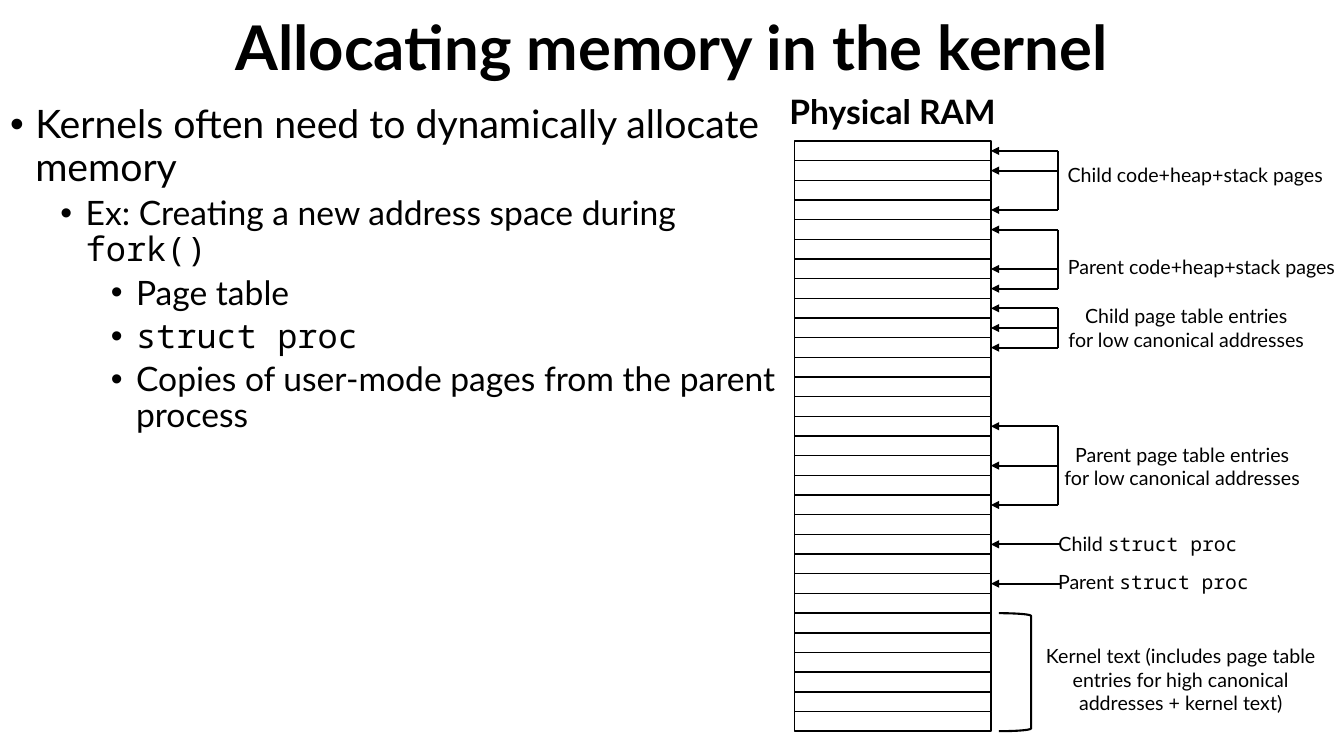
import pptx
import pptx.dml.color
import pptx.enum.shapes
import pptx.enum.text
import pptx.oxml
import pptx.oxml.ns
import pptx.util
from lxml import etree

Pt = pptx.util.Pt
SHAPES = pptx.enum.shapes.MSO_SHAPE
CENTER = pptx.enum.text.PP_ALIGN.CENTER
LEFT = pptx.enum.text.PP_ALIGN.LEFT
SANS, MONO = "Lato", "Noto Sans Mono"

# Column of physical page frames, in points
FRAME_COUNT = 30
FRAME_LEFT, FRAME_TOP = 567.4, 100.8
FRAME_WIDTH, FRAME_HEIGHT = 140.4, 14.05
RIGHT_SIDE = 3


def color(value):
    return pptx.dml.color.RGBColor.from_string(value)


def add_text(paragraph, text, font=SANS, size=14, fill="000000", bold=False):
    run = paragraph.add_run()
    run.text = text
    run.font.name = font
    run.font.size = Pt(size)
    run.font.bold = bold
    run.font.color.rgb = color(fill)


class SlideBuilder:
    line_color = "000000"
    frame_fill = "FFFFFF"

    def __init__(self, presentation):
        self.slide = presentation.slides.add_slide(presentation.slide_layouts[1])

    def place(self, shape, left, top, width, height):
        shape.left, shape.top = Pt(left), Pt(top)
        shape.width, shape.height = Pt(width), Pt(height)
        shape.text_frame.auto_size = pptx.enum.text.MSO_AUTO_SIZE.NONE
        return shape.text_frame

    def title(self, text, *box):
        text_frame = self.place(self.slide.shapes.title, *box)
        text_frame.vertical_anchor = pptx.enum.text.MSO_ANCHOR.MIDDLE
        paragraph = text_frame.paragraphs[0]
        paragraph.alignment = CENTER
        paragraph.line_spacing = 0.9
        add_text(paragraph, text, size=44, bold=True)

    def bullets(self, items, *box):
        text_frame = self.place(self.slide.placeholders[1], *box)
        for index, (level, size, runs) in enumerate(items):
            paragraph = text_frame.add_paragraph() if index else text_frame.paragraphs[0]
            paragraph.level = level
            paragraph.alignment = LEFT
            paragraph.line_spacing = 0.9
            paragraph.space_before = Pt(5 if level else 10)
            properties = paragraph._p.get_or_add_pPr()
            properties.set("marL", str(Pt(18 + 36 * level)))
            properties.set("indent", str(Pt(-18)))
            bullet_font = etree.SubElement(properties, pptx.oxml.ns.qn("a:buFont"))
            bullet_font.set("typeface", "Arial")
            bullet = etree.SubElement(properties, pptx.oxml.ns.qn("a:buChar"))
            bullet.set("char", "•")
            for text, font in runs:
                add_text(paragraph, text, font=font, size=size)

    def label(self, lines, *box, **style):
        text_frame = self.slide.shapes.add_textbox(*map(Pt, box)).text_frame
        text_frame.word_wrap = True
        for index, runs in enumerate(lines):
            paragraph = text_frame.add_paragraph() if index else text_frame.paragraphs[0]
            paragraph.alignment = CENTER
            for text, font in runs:
                add_text(paragraph, text, font=font, **style)

    def shape(self, kind, *box, fill=None, width=1):
        shape = self.slide.shapes.add_shape(kind, *map(Pt, box))
        shape.shadow.inherit = False
        if fill:
            shape.fill.solid()
            shape.fill.fore_color.rgb = color(fill)
        else:
            shape.fill.background()
        shape.line.color.rgb = color(self.line_color)
        shape.line.width = Pt(width)
        return shape

    def connector(self, *points, target=None):
        """Draw a line; with a target it becomes an arrow to its right side."""
        connector = self.slide.shapes.add_connector(
            pptx.enum.shapes.MSO_CONNECTOR.STRAIGHT, *map(Pt, points))
        connector.line.color.rgb = color(self.line_color)
        connector.line.width = Pt(1.5)
        if target is not None:
            connector.end_connect(target, RIGHT_SIDE)
            arrowhead = etree.SubElement(
                connector.line._get_or_add_ln(), pptx.oxml.ns.qn("a:tailEnd"))
            arrowhead.set("type", "triangle")
        etree.SubElement(connector._element.spPr, pptx.oxml.ns.qn("a:effectLst"))


def frame_middle(row):
    return FRAME_TOP + (row + 0.5) * FRAME_HEIGHT


def main():
    presentation = pptx.Presentation()
    presentation.slide_width, presentation.slide_height = Pt(960), Pt(540)
    builder = SlideBuilder(presentation)

    # Title and list
    builder.title("Allocating memory in the kernel", 66.2, 4.3, 828, 64)
    builder.bullets([
        (0, 28, [("Kernels often need to dynamically allocate memory", SANS)]),
        (1, 24, [("Ex: Creating a new address space during ", SANS), ("fork()", MONO)]),
        (2, 24, [("Page table", SANS)]),
        (2, 24, [("struct proc", MONO)]),
        (2, 24, [("Copies of user-mode pages from the parent process", SANS)]),
    ], 0, 71.3, 561.6, 452.9)

    # Physical RAM
    frames = [
        builder.shape(SHAPES.RECTANGLE, FRAME_LEFT, FRAME_TOP + row * FRAME_HEIGHT,
                      FRAME_WIDTH, FRAME_HEIGHT, fill=builder.frame_fill)
        for row in range(FRAME_COUNT)
    ]
    builder.label([[("Physical RAM", SANS)]], 550.8, 61.2, 173.5, 36, size=24, bold=True)

    # Kernel text in the last six frames
    builder.shape(SHAPES.RIGHT_BRACKET, 713.5, FRAME_TOP + 24 * FRAME_HEIGHT,
                  23, 6 * FRAME_HEIGHT, width=1.5)
    builder.label([[("Kernel text (includes page table entries for high canonical "
                     "addresses + kernel text)", SANS)]], 728.6, 456.5, 229.7, 58.3)

    # Owners of the other frames: rows, arrow start, label lines, label box
    low_addresses = [("for low canonical addresses", SANS)]
    owners = [
        ([0, 1, 3], 755.5, [[("Child code+heap+stack pages", SANS)]],
         (749.5, 113, 208.8, 24.5)),
        ([4, 6, 7], 755.5, [[("Parent code+heap+stack pages", SANS)]],
         (751, 178.6, 214.6, 24.5)),
        ([8, 9, 10], 755.5, [[("Child page table entries", SANS)], low_addresses],
         (749.5, 213.8, 195.8, 41)),
        ([14, 16, 18], 756, [[("Parent page table entries", SANS)], low_addresses],
         (746.6, 312.5, 195.8, 41)),
        ([20], 757.4, [[("Child ", SANS), ("struct proc", MONO)]],
         (745.9, 376.6, 148.3, 24.5)),
        ([22], 757.4, [[("Parent ", SANS), ("struct proc", MONO)]],
         (745.9, 403.2, 156.2, 24.5)),
    ]
    for rows, start, lines, box in owners:
        for row in rows:
            middle = frame_middle(row)
            builder.connector(start, middle, FRAME_LEFT + FRAME_WIDTH, middle,
                              target=frames[row])
        if len(rows) > 1:
            builder.connector(start, frame_middle(rows[0]), start, frame_middle(rows[-1]))
        builder.label(lines, *box)

    presentation.save("out.pptx")


if __name__ == "__main__":
    main()
